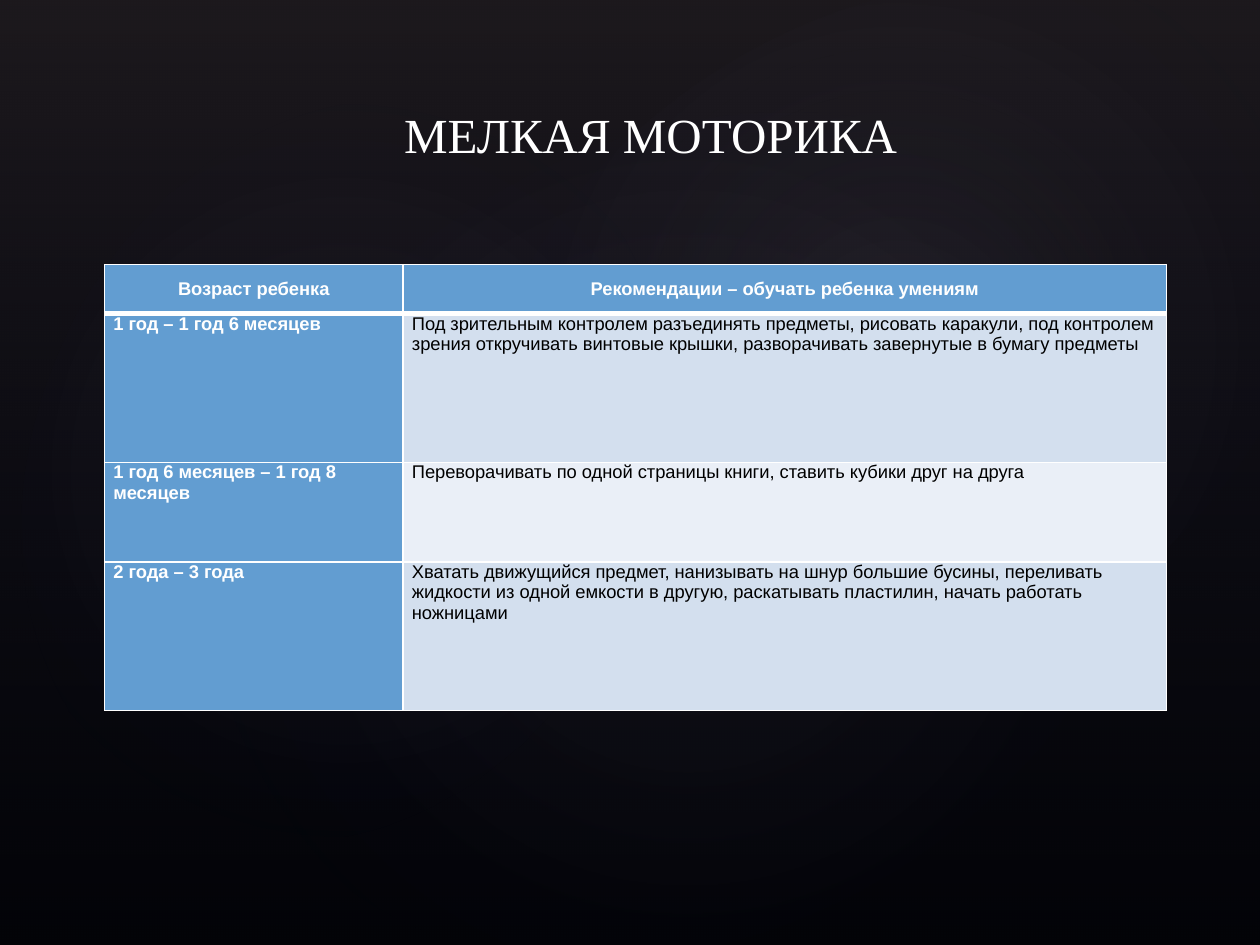
from lxml.etree import SubElement
from pptx import Presentation
from pptx.dml.color import RGBColor
from pptx.enum.shapes import MSO_SHAPE
from pptx.enum.text import MSO_ANCHOR, PP_ALIGN
from pptx.oxml.ns import qn
from pptx.util import Inches, Pt

COLORS = {
    "background": "000000",
    "veil": "504652",
    "navy": "242852",
    "glow": "C4BCC6",
    "white": "FFFFFF",
    "black": "000000",
    "accent": "629DD1",
    "band_dark": "D3DFEE",
    "band_light": "EAEFF7",
}

HEADER = ["Возраст ребенка", "Рекомендации – обучать ребенка умениям"]
SKILLS = [
    ["1 год – 1 год 6 месяцев",
     "Под зрительным контролем разъединять предметы, рисовать каракули, "
     "под контролем зрения откручивать винтовые крышки, разворачивать "
     "завернутые в бумагу предметы"],
    ["1 год 6 месяцев – 1 год 8 месяцев",
     "Переворачивать по одной страницы книги, ставить кубики друг на друга"],
    ["2 года – 3 года",
     "Хватать движущийся предмет, нанизывать на шнур большие бусины, "
     "переливать жидкости из одной емкости в другую, раскатывать пластилин, "
     "начать работать ножницами"],
]


def rgb(name):
    return RGBColor.from_string(COLORS[name])


class SlideBuilder:
    title_font = "Times New Roman"
    table_font = "Arial"

    def __init__(self, slide):
        self.slide = slide

    def background(self, color):
        fill = self.slide.background.fill
        fill.solid()
        fill.fore_color.rgb = rgb(color)

    def gradient_shape(self, kind, box, stops, rotation=0, radial=False):
        """Add an unlined shape; stops are (position %, color, opacity %)."""
        sp = self.slide.shapes.add_shape(kind, *map(Inches, box))
        sp.rotation = rotation
        sp.shadow.inherit = False
        sp.line.fill.background()
        sp.fill.background()
        no_fill = sp.element.spPr.find(qn("a:noFill"))
        grad = no_fill.makeelement(qn("a:gradFill"), {"rotWithShape": "1"})
        stop_list = SubElement(grad, qn("a:gsLst"))
        for position, color, opacity in stops:
            stop = SubElement(stop_list, qn("a:gs"), pos=str(position * 1000))
            clr = SubElement(stop, qn("a:srgbClr"), val=COLORS[color])
            SubElement(clr, qn("a:alpha"), val=str(opacity * 1000))
        if radial:
            circle = SubElement(grad, qn("a:path"), {"path": "circle"})
            SubElement(circle, qn("a:fillToRect"), dict.fromkeys("ltrb", "50000"))
        else:
            SubElement(grad, qn("a:lin"), ang="5400000", scaled="0")
        no_fill.getparent().replace(no_fill, grad)

    def format_text(self, p, font, size, color, bold=False):
        for r in p.runs:
            r.font.name = font
            r.font.size = Pt(size)
            r.font.bold = bold
            r.font.color.rgb = rgb(color)

    def title(self, text, box):
        tf = self.slide.shapes.add_textbox(*map(Inches, box)).text_frame
        tf.word_wrap = True
        tf.margin_top = Inches(0.07)
        tf.text = text
        self.format_text(tf.paragraphs[0], self.title_font, 28, "white")

    def borders(self, cell, top=1, bottom=1):
        tc_pr = cell._tc.get_or_add_tcPr()
        for side, width in (("L", 1), ("R", 1), ("T", top), ("B", bottom)):
            ln = SubElement(tc_pr, qn(f"a:ln{side}"), w=str(Pt(width)))
            fill = SubElement(ln, qn("a:solidFill"))
            SubElement(fill, qn("a:srgbClr"), val=COLORS["white"])

    def table(self, rows, box, widths, heights):
        frame = self.slide.shapes.add_table(len(rows), len(widths), *map(Inches, box))
        table = frame.table
        for column, width in zip(table.columns, widths):
            column.width = Inches(width)
        for i, (row, height) in enumerate(zip(rows, heights)):
            table.rows[i].height = Inches(height)
            for j, text in enumerate(row):
                self.cell(table.cell(i, j), text, i, j)

    def cell(self, cell, text, row, col):
        header = row == 0
        label = header or col == 0
        self.borders(cell, top=3 if row == 1 else 1, bottom=3 if header else 1)
        cell.fill.solid()
        band = "band_dark" if row % 2 else "band_light"
        cell.fill.fore_color.rgb = rgb("accent" if label else band)
        cell.margin_left = cell.margin_right = Inches(0.07)
        cell.margin_top = cell.margin_bottom = 0
        cell.vertical_anchor = MSO_ANCHOR.MIDDLE if header else MSO_ANCHOR.TOP
        cell.text_frame.text = text
        p = cell.text_frame.paragraphs[0]
        p.alignment = PP_ALIGN.CENTER if header else PP_ALIGN.LEFT
        self.format_text(p, self.table_font, 10.5, "white" if label else "black", label)


def main():
    prs = Presentation()
    prs.slide_width, prs.slide_height = Inches(10), Inches(7.5)
    builder = SlideBuilder(prs.slides.add_slide(prs.slide_layouts[6]))

    builder.background("background")
    builder.gradient_shape(MSO_SHAPE.RECTANGLE, (0, 0, 10, 7.5),
                           [(0, "veil", 36), (100, "navy", 10)])
    glows = [
        ((1.5, 1.14, 7.92, 6.24), 328.7, 7),
        ((-0.3, 1.28, 6.06, 4.9), 294.3, 8),
        ((3.58, 0.13, 7.09, 5.2), 328.7, 8),
    ]
    for box, rotation, opacity in glows:
        builder.gradient_shape(MSO_SHAPE.OVAL, box,
                               [(0, "glow", opacity), (58, "navy", 0), (100, "navy", 0)],
                               rotation, radial=True)

    builder.table([HEADER] + SKILLS, (0.83, 2.1, 8.43, 3.54),
                  widths=[2.37, 6.06], heights=[0.39, 1.18, 0.79, 1.18])
    builder.title("МЕЛКАЯ МОТОРИКА", (3.11, 0.76, 4.23, 0.88))
    prs.save("out.pptx")


if __name__ == "__main__":
    main()
